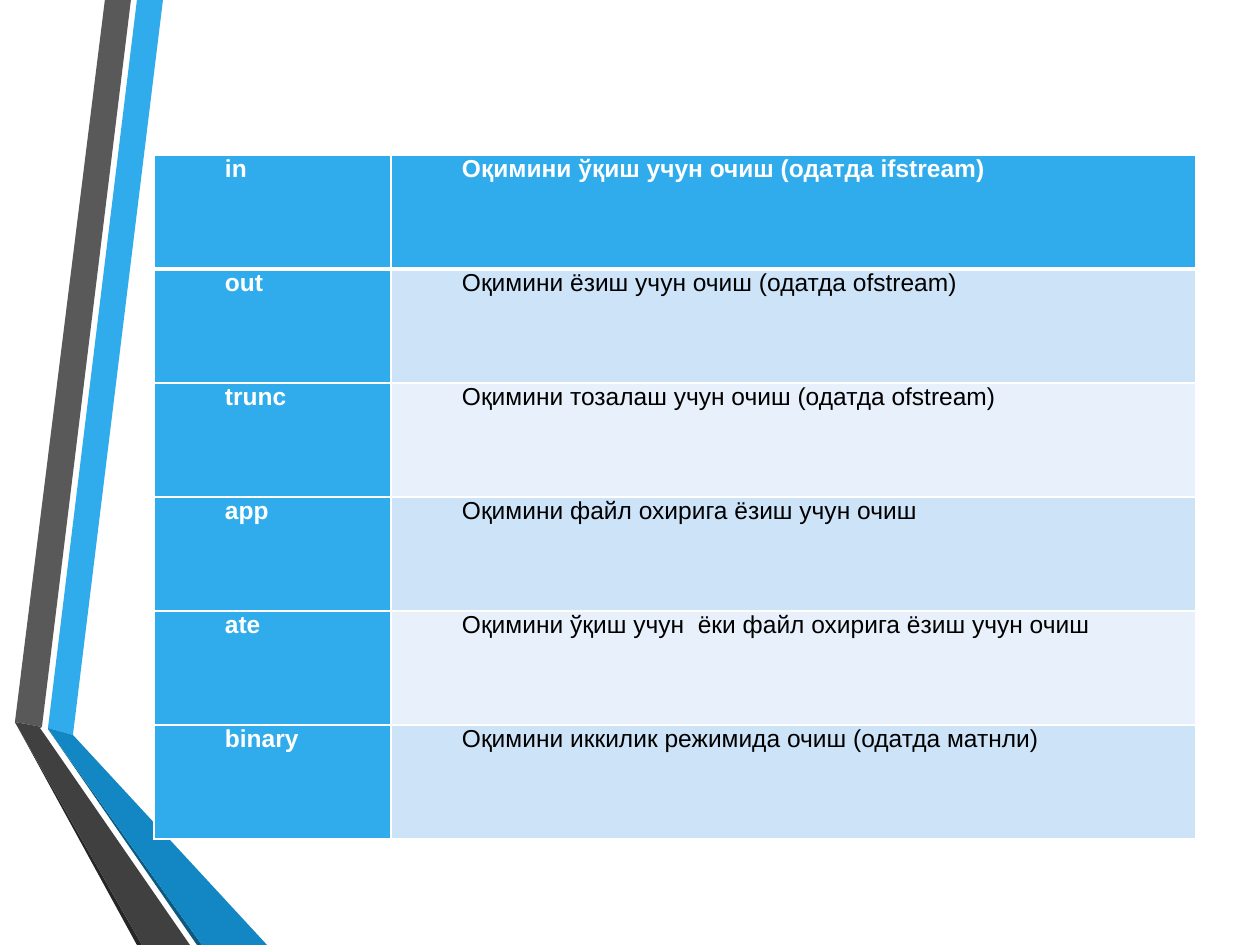
from lxml.etree import SubElement
from pptx import Presentation
from pptx.dml.color import RGBColor
from pptx.enum.text import PP_ALIGN
from pptx.oxml.ns import qn
from pptx.util import Pt

EMU_PER_PX = 914400 / 126
WHITE, BLACK, BLUE = "FFFFFF", "000000", "30ACEC"
BANDS = ("E8F1FB", "CDE3F8")

# Each ribbon piece: fill and outline in px
RIBBONS = [
    (BLUE, [(48, 728), (73, 735), (163, 0), (137, 0)]),
    ("595959", [(131, 0), (105, 0), (15, 722), (42, 727)]),
    ("262626", [(15, 722), (137, 945), (142, 945)]),
    ("0C5A82", [(48, 729), (197, 945), (202, 945)]),
    ("1287C3", [(48, 729), (202, 945), (267, 945), (73, 735), (48, 728)]),
    ("404040", [(190, 945), (45, 735), (40, 728), (42, 727), (15, 722), (142, 945)]),
]

OPEN_MODES = [
    ("in", "Оқимини ўқиш учун очиш (одатда ifstream)"),
    ("out", "Оқимини ёзиш учун очиш (одатда ofstream)"),
    ("trunc", "Оқимини тозалаш учун очиш (одатда ofstream)"),
    ("app", "Оқимини файл охирига ёзиш учун очиш"),
    ("ate", "Оқимини ўқиш учун  ёки файл охирига ёзиш учун очиш"),
    ("binary", "Оқимини иккилик режимида очиш (одатда матнли)"),
]


def px(length):
    return round(length * EMU_PER_PX)


def color(hex_string):
    return RGBColor.from_string(hex_string)


class SlideBuilder:
    """Holds the text style and the slide being filled."""

    font_name = "Arial"
    font_size = Pt(14)
    space_before = Pt(6)
    first_line_indent = 62
    side_margin = 9

    def __init__(self, slide):
        self.slide = slide

    def polygon(self, points, fill):
        builder = self.slide.shapes.build_freeform(*points[0], scale=EMU_PER_PX)
        builder.add_line_segments(points[1:], close=True)
        shape = builder.convert_to_shape()
        shape.shadow.inherit = False
        shape.fill.solid()
        shape.fill.fore_color.rgb = color(fill)
        shape.line.fill.background()

    def table(self, left, top, column_widths, row_height, rows):
        """Add a table whose first row and first column are headings."""
        table = self.slide.shapes.add_table(
            len(rows), len(column_widths), px(left), px(top),
            px(sum(column_widths)), px(row_height * len(rows))).table
        for column, width in zip(table.columns, column_widths):
            column.width = px(width)
        for row_index, texts in enumerate(rows):
            table.rows[row_index].height = px(row_height)
            for column_index, text in enumerate(texts):
                cell = table.cell(row_index, column_index)
                heading = row_index == 0 or column_index == 0
                self.borders(cell, top=3 if row_index == 1 else 1,
                             bottom=3 if row_index == 0 else 1)
                cell.fill.solid()
                cell.fill.fore_color.rgb = color(BLUE if heading else BANDS[row_index % 2])
                self.cell_text(cell, text, heading)

    def borders(self, cell, top, bottom):
        properties = cell._tc.get_or_add_tcPr()
        for side, points in (("L", 1), ("R", 1), ("T", top), ("B", bottom)):
            line = SubElement(properties, qn(f"a:ln{side}"), w=str(Pt(points)))
            fill = SubElement(line, qn("a:solidFill"))
            SubElement(fill, qn("a:srgbClr"), val=WHITE)

    def cell_text(self, cell, text, heading):
        cell.margin_left = cell.margin_right = px(self.side_margin)
        cell.margin_top = cell.margin_bottom = 0
        paragraph = cell.text_frame.paragraphs[0]
        paragraph.alignment = PP_ALIGN.JUSTIFY
        paragraph.space_before = self.space_before
        paragraph_properties = paragraph._p.get_or_add_pPr()
        paragraph_properties.set("marL", "0")
        paragraph_properties.set("indent", str(px(self.first_line_indent)))
        run = paragraph.add_run()
        run.text = text
        run.font.name = self.font_name
        run.font.size = self.font_size
        run.font.bold = heading
        run.font.color.rgb = color(WHITE if heading else BLACK)


def main():
    presentation = Presentation()
    presentation.slide_width = px(1260)
    presentation.slide_height = px(945)
    blank_layout = presentation.slide_layouts[6]
    builder = SlideBuilder(presentation.slides.add_slide(blank_layout))
    for fill, points in RIBBONS:
        builder.polygon(points, fill)
    builder.table(154, 155, (237, 805), 114, OPEN_MODES)
    presentation.save("out.pptx")


if __name__ == "__main__":
    main()
